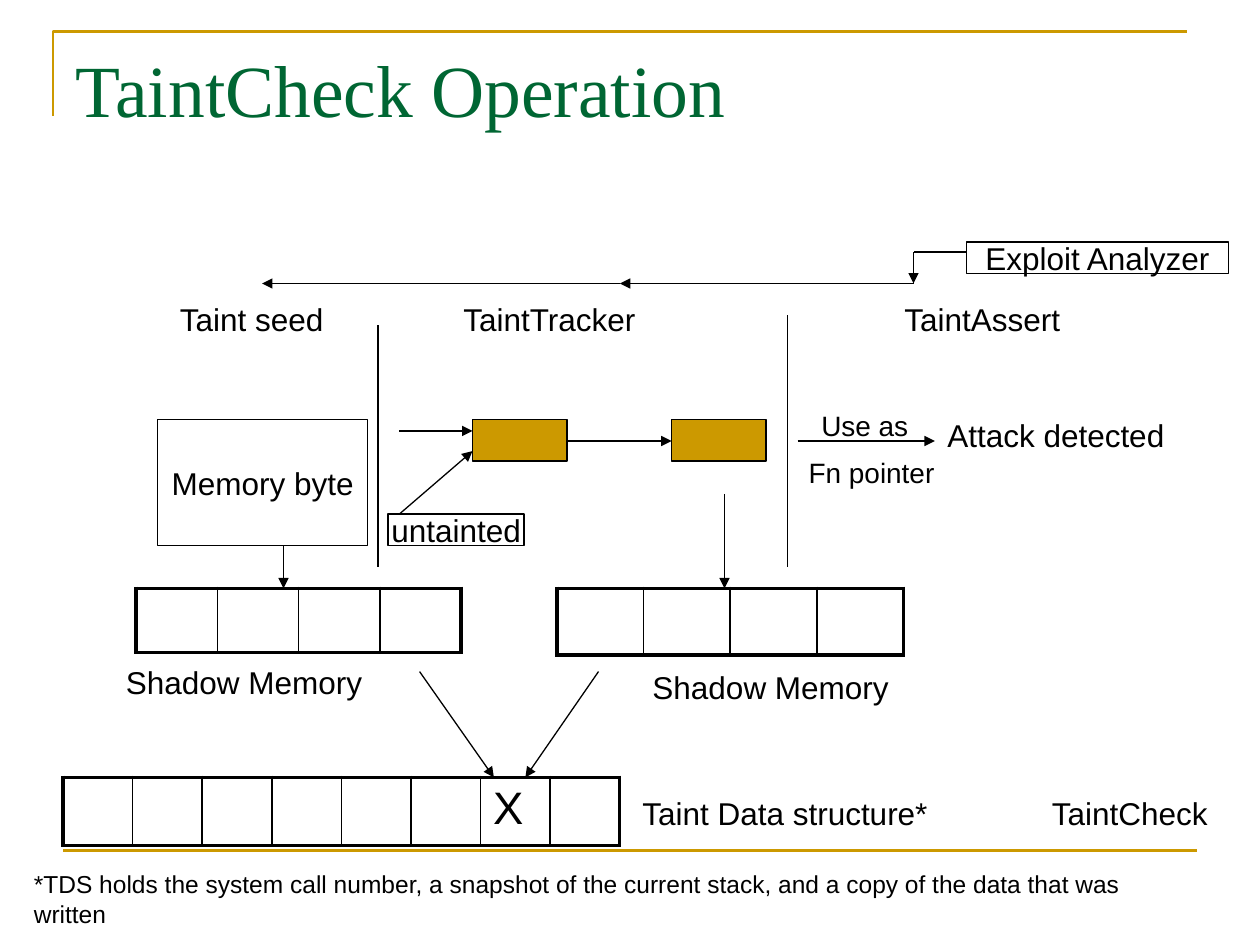
"""Build the TaintCheck Operation slide."""
from lxml.etree import SubElement
from pptx import Presentation
from pptx.dml.color import RGBColor
from pptx.enum.shapes import MSO_CONNECTOR, MSO_SHAPE
from pptx.enum.text import MSO_ANCHOR, MSO_AUTO_SIZE, PP_ALIGN
from pptx.oxml.ns import qn
from pptx.util import Inches, Pt

BLACK = RGBColor(0x00, 0x00, 0x00)
WHITE = RGBColor(0xFF, 0xFF, 0xFF)
GOLD = RGBColor(0xCC, 0x99, 0x00)
GREEN = RGBColor(0x00, 0x66, 0x33)


def set_text(tf, text, size, font="Arial", color=BLACK, align=PP_ALIGN.LEFT):
    tf.text = text
    p = tf.paragraphs[0]
    p.alignment = align
    r = p.runs[0]
    r.font.name = font
    r.font.size = Pt(size)
    r.font.color.rgb = color


def add_line(x1, y1, x2, y2, arrow=True, color=BLACK, width=0.75):
    c = s.shapes.add_connector(
        MSO_CONNECTOR.STRAIGHT, Inches(x1), Inches(y1), Inches(x2), Inches(y2)
    )
    c.line.color.rgb = color
    c.line.width = Pt(width)
    if arrow:
        SubElement(c.line._get_or_add_ln(), qn("a:tailEnd"), type="triangle")
    SubElement(c._element.spPr, qn("a:effectLst"))


prs = Presentation()
prs.slide_width = Inches(10)
prs.slide_height = Inches(7.5)
s = prs.slides.add_slide(prs.slide_layouts[5])

fb = s.shapes.build_freeform(Inches(0.42), Inches(0.92))
fb.add_line_segments(
    [(Inches(0.42), Inches(0.25)), (Inches(9.42), Inches(0.25))], close=False
)
sp = fb.convert_to_shape()
sp.shadow.inherit = False
sp.fill.background()
sp.line.color.rgb = GOLD
sp.line.width = Pt(1.5)
add_line(0.5, 6.75, 9.5, 6.75, arrow=False, color=GOLD, width=1.5)

title = s.shapes.title
title.left, title.top = Inches(0.5), Inches(0.3)
title.width, title.height = Inches(9), Inches(1.25)
tf = title.text_frame
tf.auto_size = MSO_AUTO_SIZE.NONE
tf.vertical_anchor = MSO_ANCHOR.TOP
set_text(tf, "TaintCheck Operation", 42, "Times New Roman", GREEN)

for x, y, w, h, labels in [
    (0.5, 6.17, 4.42, 0.54, ["", "", "", "", "", "", "X", ""]),
    (1.08, 4.67, 2.58, 0.51, [""] * 4),
    (4.42, 4.67, 2.75, 0.53, [""] * 4),
]:
    n = len(labels)
    table = s.shapes.add_table(
        1, n, Inches(x), Inches(y), Inches(w), Inches(h)
    ).table
    table.first_row = False
    table.horz_banding = False
    for i, label in enumerate(labels):
        table.columns[i].width = Inches(w / n)
        cell = table.cell(0, i)
        if label:
            set_text(cell.text_frame, label, 26)
        tcPr = cell._tc.get_or_add_tcPr()
        left = 2.25 if i == 0 else 1
        right = 2.25 if i == n - 1 else 1
        for side, width in [("L", left), ("R", right), ("T", 2.25), ("B", 2.25)]:
            ln = SubElement(tcPr, qn(f"a:ln{side}"), w=str(Pt(width)))
            fill = SubElement(ln, qn("a:solidFill"))
            SubElement(fill, qn("a:srgbClr"), val=str(BLACK))
        cell.fill.background()

for x, y, w, h, color, text in [
    (1.25, 3.33, 1.67, 1, WHITE, "Memory byte"),
    (3.08, 4.08, 1.08, 0.25, WHITE, "untainted"),
    (7.67, 1.92, 2.08, 0.25, WHITE, "Exploit Analyzer"),
    (3.75, 3.33, 0.75, 0.33, GOLD, ""),
    (5.33, 3.33, 0.75, 0.33, GOLD, ""),
]:
    sp = s.shapes.add_shape(
        MSO_SHAPE.RECTANGLE, Inches(x), Inches(y), Inches(w), Inches(h)
    )
    sp.shadow.inherit = False
    sp.fill.solid()
    sp.fill.fore_color.rgb = color
    sp.line.color.rgb = BLACK
    sp.line.width = Pt(0.75)
    if text:
        tf = sp.text_frame
        tf.word_wrap = False
        tf.vertical_anchor = MSO_ANCHOR.MIDDLE
        set_text(tf, text, 18, align=PP_ALIGN.CENTER)

for x1, y1, x2, y2 in [
    (2.25, 4.33, 2.25, 4.67),
    (3.17, 3.42, 3.75, 3.42),
    (3.17, 4.08, 3.75, 3.58),
    (4.5, 3.5, 5.33, 3.5),
    (6.33, 3.5, 7.42, 3.5),
    (7.25, 2, 7.25, 2.25),
    (7.25, 2.25, 4.92, 2.25),
    (4.92, 2.25, 2.08, 2.25),
    (5.75, 3.92, 5.75, 4.67),
    (3.33, 5.33, 3.92, 6.17),
    (4.75, 5.33, 4.17, 6.17),
]:
    add_line(x1, y1, x2, y2)

for x1, y1, x2, y2 in [
    (3, 2.58, 3, 4.5),
    (6.25, 2.5, 6.25, 4.5),
    (7.67, 2, 7.25, 2),
]:
    add_line(x1, y1, x2, y2, arrow=False)

footnote = (
    "*TDS holds the system call number, a snapshot of the current stack, "
    "and a copy of the data that was written"
)
for x, y, w, h, size, text in [
    (1.33, 2.33, 1.37, 0.4, 18, "Taint seed"),
    (3.58, 2.33, 1.6, 0.4, 18, "TaintTracker"),
    (7.08, 2.33, 1.47, 0.4, 18, "TaintAssert"),
    (6.42, 3.19, 0.9, 0.37, 16, "Use as"),
    (6.32, 3.57, 1.2, 0.37, 16, "Fn pointer"),
    (7.42, 3.25, 1.92, 0.4, 18, "Attack detected"),
    (0.9, 5.21, 2.08, 0.4, 18, "Shadow Memory"),
    (5.08, 5.25, 2.08, 0.4, 18, "Shadow Memory"),
    (5, 6.25, 2.49, 0.4, 18, "Taint Data structure*"),
    (8.25, 6.25, 1.47, 0.4, 18, "TaintCheck"),
    (0.17, 6.85, 9.42, 0.57, 14, footnote),
]:
    tf = s.shapes.add_textbox(
        Inches(x), Inches(y), Inches(w), Inches(h)
    ).text_frame
    tf.word_wrap = text == footnote
    tf.auto_size = MSO_AUTO_SIZE.SHAPE_TO_FIT_TEXT
    set_text(tf, text, size)

prs.save("out.pptx")
